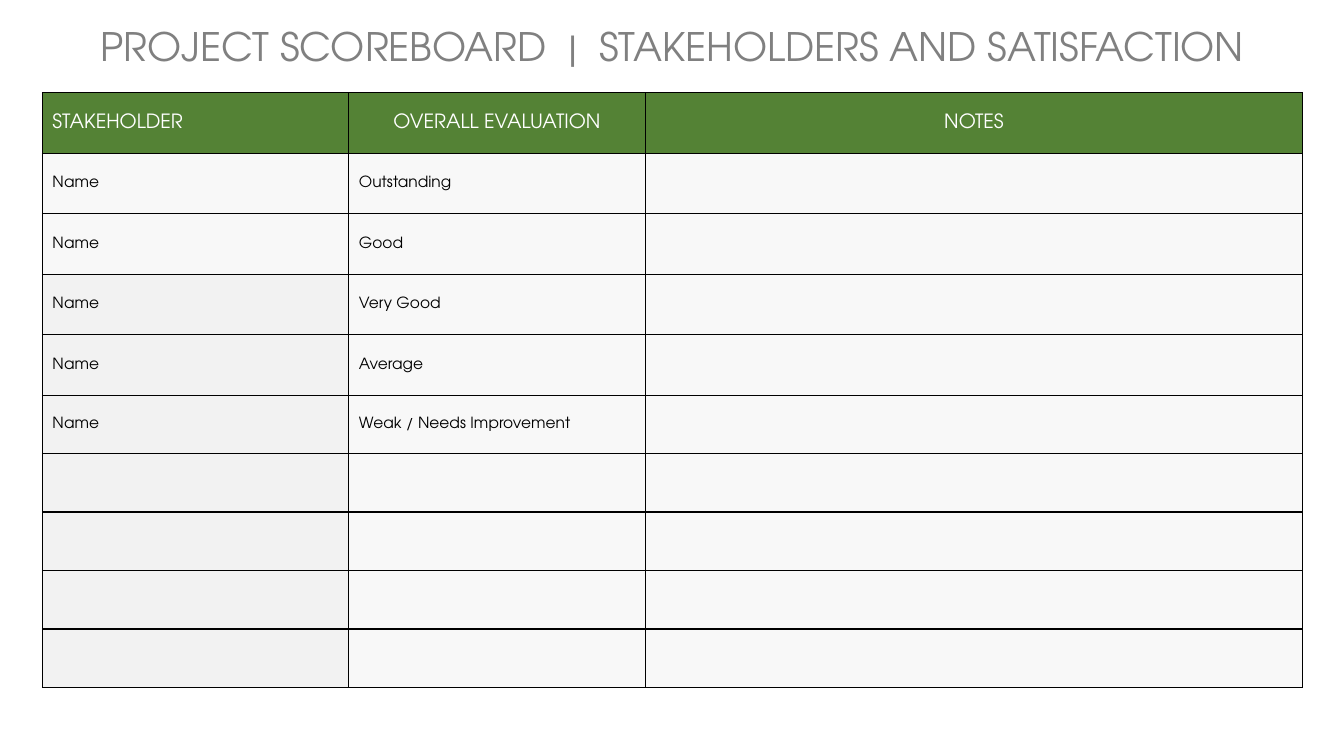
from lxml.etree import SubElement
from pptx import Presentation
from pptx.dml.color import RGBColor
from pptx.enum.text import MSO_ANCHOR as ANCHOR, MSO_AUTO_SIZE as AUTO, PP_ALIGN as ALIGN
from pptx.oxml.ns import qn
from pptx.util import Inches, Pt

FONT = "TeX Gyre Adventor"
GREEN, PALE, BLACK, WHITE, GRAY = "548235", "F2F2F2", "000000", "FFFFFF", "808080"
COLS = [3.04, 2.94, 6.52]
ROWS = [0.6] * 5 + [0.58] * 5
HEADERS = ["STAKEHOLDER", "OVERALL EVALUATION", "NOTES"]
RATINGS = ["Outstanding", "Good", "Very Good", "Average", "Weak / Needs Improvement"]


def rgb(color):
    return RGBColor.from_string(color)


def add_run(p, text, size, color, align):
    p.alignment = align
    r = p.add_run()
    r.text = text
    r.font.name, r.font.size = FONT, Pt(size)
    r.font.color.rgb = rgb(color)


prs = Presentation()
prs.slide_width, prs.slide_height = Inches(13.33), Inches(7.5)
s = prs.slides.add_slide(prs.slide_layouts[5])

# Title across the full width
title = s.shapes.title
title.left, title.top = 0, Inches(0.17)
title.width, title.height = prs.slide_width, Inches(0.57)
tf = title.text_frame
tf.word_wrap, tf.auto_size, tf.vertical_anchor = True, AUTO.NONE, ANCHOR.MIDDLE
add_run(tf.paragraphs[0], "PROJECT SCOREBOARD  |  STAKEHOLDERS AND SATISFACTION",
        28, GRAY, ALIGN.CENTER)

# Scoreboard grid
sp = s.shapes.add_table(len(ROWS), len(COLS), Inches(0.42), Inches(0.92),
                        Inches(sum(COLS)), Inches(sum(ROWS)))
table = sp.table
for column, width in zip(table.columns, COLS):
    column.width = Inches(width)
for row, height in zip(table.rows, ROWS):
    row.height = Inches(height)

# Header, then one row per rated stakeholder; the rest stay empty
texts = [HEADERS] + [["Name", rating, ""] for rating in RATINGS]
texts += [[""] * len(COLS)] * (len(ROWS) - len(texts))

for i, row_texts in enumerate(texts):
    for j, text in enumerate(row_texts):
        header = i == 0
        cell = table.cell(i, j)
        cell.vertical_anchor = ANCHOR.MIDDLE
        tcPr = cell._tc.get_or_add_tcPr()

        # Thin black borders, which must precede the fill
        for side in ("a:lnL", "a:lnR", "a:lnT", "a:lnB"):
            ln = SubElement(tcPr, qn(side), w=str(Pt(1)))
            SubElement(SubElement(ln, qn("a:solidFill")), qn("a:srgbClr"), val=BLACK)

        # Solid header; translucent body, denser in the first column from row 3
        cell.fill.solid()
        cell.fill.fore_color.rgb = rgb(GREEN if header else PALE)
        if not header:
            opacity = 95 if j == 0 and i >= 3 else 50
            color = tcPr.find(qn("a:solidFill")).find(qn("a:srgbClr"))
            SubElement(color, qn("a:alpha"), val=str(opacity * 1000))

        if text:
            add_run(cell.text_frame.paragraphs[0], text,
                    14 if header else 11, WHITE if header else BLACK,
                    ALIGN.CENTER if header and j else ALIGN.LEFT)

prs.save("out.pptx")
